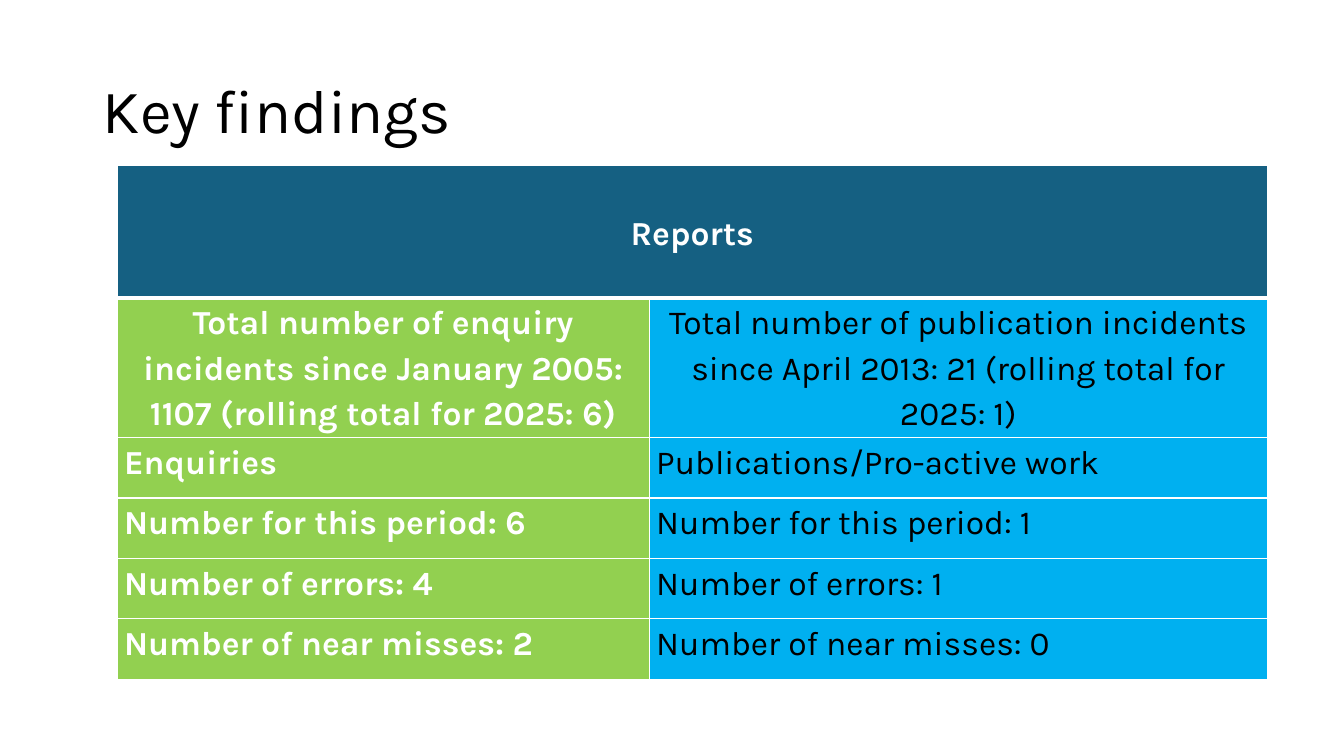
from dataclasses import dataclass

from lxml import etree
from pptx import Presentation
from pptx import util as u
from pptx.dml.color import RGBColor
from pptx.enum import text
from pptx.oxml.ns import qn

WIDTH, HEIGHT = u.Inches(13.33), u.Inches(7.5)
WHITE = RGBColor(0xFF, 0xFF, 0xFF)
BLACK = RGBColor(0x00, 0x00, 0x00)
TEAL = RGBColor(0x15, 0x60, 0x82)
GREEN = RGBColor(0x92, 0xD0, 0x50)
BLUE = RGBColor(0x00, 0xB0, 0xF0)
FONT = "Karla"
LEFT, CENTER, JUSTIFY = text.PP_ALIGN.LEFT, text.PP_ALIGN.CENTER, text.PP_ALIGN.JUSTIFY
TOP, MIDDLE = text.MSO_ANCHOR.TOP, text.MSO_ANCHOR.MIDDLE


@dataclass(frozen=True)
class CellStyle:
    fill: RGBColor
    color: RGBColor
    bold: bool


@dataclass(frozen=True)
class Finding:
    enquiry: str
    publication: str
    height: float
    aligns: tuple


HEADER = CellStyle(TEAL, WHITE, True)
COLUMN_STYLES = (CellStyle(GREEN, WHITE, True), CellStyle(BLUE, BLACK, False))
COLUMN_WIDTHS = (39.6, 46)
HEADER_HEIGHT = 17.6
FINDINGS = (
    Finding("Total number of enquiry incidents since January 2005: 1107 (rolling total for 2025: 6)",
            "Total number of publication incidents since April 2013: 21 (rolling total for 2025: 1)",
            17.73, (CENTER, CENTER)),
    Finding("Enquiries", "Publications/Pro-active work", 8, (JUSTIFY, LEFT)),
    Finding("Number for this period: 6", "Number for this period: 1", 8, (JUSTIFY, LEFT)),
    Finding("Number of errors: 4", "Number of errors: 1", 8, (LEFT, LEFT)),
    Finding("Number of near misses: 2", "Number of near misses: 0", 8, (LEFT, JUSTIFY)),
)


def across(columns: float) -> int:
    return round(WIDTH * columns / 100)


def down(rows: float) -> int:
    return round(HEIGHT * rows / 100)


def write(frame, content: str, *, size: float, color: RGBColor, bold: bool = False,
          align=LEFT, spacing: float = 1.0, after: float = 0) -> None:
    para = frame.paragraphs[0]
    para.alignment, para.line_spacing, para.space_after = align, spacing, u.Pt(after)
    span = para.add_run()
    span.text = content
    span.font.name, span.font.size, span.font.bold = FONT, u.Pt(size), bold
    span.font.color.rgb = color


def add_borders(cell, bottom: float) -> None:
    properties = cell._tc.get_or_add_tcPr()
    for side, width in (("L", 1), ("R", 1), ("T", 1), ("B", bottom)):
        line = etree.SubElement(properties, qn(f"a:ln{side}"), w=str(u.Pt(width)))
        solid = etree.SubElement(line, qn("a:solidFill"))
        etree.SubElement(solid, qn("a:srgbClr"), val=str(WHITE))


def style_cell(cell, style: CellStyle, *, bottom: float = 1, anchor=TOP) -> None:
    add_borders(cell, bottom)
    cell.fill.solid()
    cell.fill.fore_color.rgb = style.fill
    cell.margin_left = cell.margin_right = across(0.53)
    cell.margin_top = cell.margin_bottom = 0
    cell.vertical_anchor = anchor


def write_cell(cell, content: str, style: CellStyle, align) -> None:
    write(cell.text_frame, content, size=24, color=style.color, bold=style.bold,
          align=align, spacing=1.15, after=10)


def add_title(page) -> None:
    box = page.shapes.add_textbox(across(6.9), down(5.33), across(86.25), down(19.33))
    box.text_frame.word_wrap = True
    box.text_frame.vertical_anchor = MIDDLE
    write(box.text_frame, "Key findings", size=44, color=BLACK, spacing=0.9)


def add_findings(page) -> None:
    heights = (HEADER_HEIGHT, *(finding.height for finding in FINDINGS))
    table = page.shapes.add_table(
        len(heights), len(COLUMN_WIDTHS), across(8.7), down(21.87),
        across(sum(COLUMN_WIDTHS)), down(sum(heights))).table
    table.horz_banding = False
    for column, width in zip(table.columns, COLUMN_WIDTHS):
        column.width = across(width)
    for row, height in zip(table.rows, heights):
        row.height = down(height)

    for cell in table.rows[0].cells:
        style_cell(cell, HEADER, bottom=3, anchor=MIDDLE)
    table.cell(0, 0).merge(table.cell(0, 1))
    write_cell(table.cell(0, 0), "Reports", HEADER, CENTER)

    for number, finding in enumerate(FINDINGS, start=1):
        contents = (finding.enquiry, finding.publication)
        for cell, content, style, align in zip(
                table.rows[number].cells, contents, COLUMN_STYLES, finding.aligns):
            style_cell(cell, style)
            write_cell(cell, content, style, align)


def main() -> None:
    deck = Presentation()
    deck.slide_width, deck.slide_height = WIDTH, HEIGHT
    page = deck.slides.add_slide(deck.slide_layouts[6])
    add_title(page)
    add_findings(page)
    deck.save("out.pptx")


if __name__ == "__main__":
    main()
